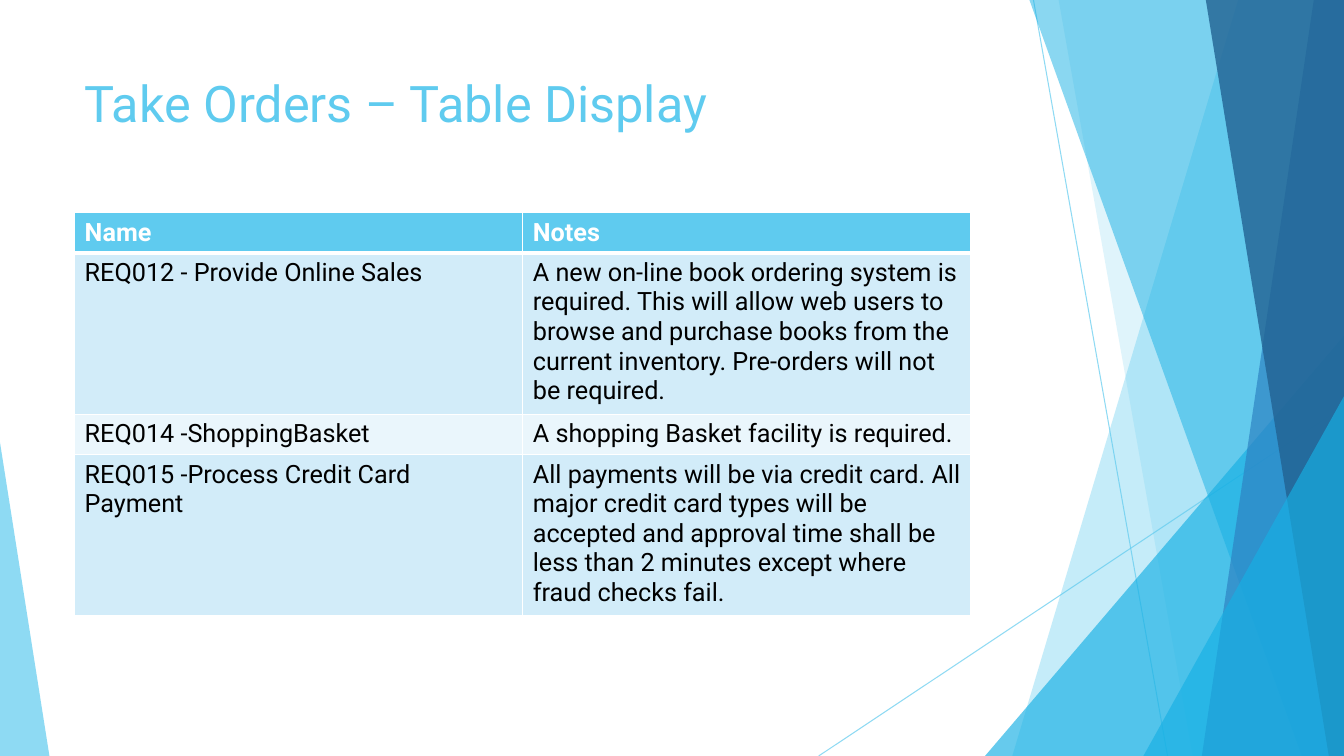
from lxml.etree import SubElement
from pptx import Presentation
from pptx.dml.color import RGBColor
from pptx.enum.shapes import MSO_CONNECTOR, MSO_SHAPE
from pptx.enum.text import MSO_ANCHOR
from pptx.oxml.ns import qn
from pptx.util import Inches, Pt

SKY = RGBColor(0x5F, 0xCB, 0xEF)
CYAN = RGBColor(0x17, 0xB0, 0xE4)
BLUE = RGBColor(0x2E, 0x83, 0xC3)
NAVY = RGBColor(0x22, 0x62, 0x92)
DARK_BAND = RGBColor(0xD2, 0xEC, 0xF9)
LIGHT_BAND = RGBColor(0xEA, 0xF6, 0xFC)
WHITE = RGBColor(0xFF, 0xFF, 0xFF)
BLACK = RGBColor(0, 0, 0)
FONT = "Roboto"
PAGE_WIDTH, PAGE_HEIGHT = 13.33, 7.5

REQUIREMENTS = [
    ("Name", "Notes"),
    ("REQ012 - Provide Online Sales",
     "A new on-line book ordering system is required. This will allow web users to "
     "browse and purchase books from the current inventory. Pre-orders will not be required."),
    ("REQ014 -ShoppingBasket", "A shopping Basket facility is required."),
    ("REQ015 -Process Credit Card Payment",
     "All payments will be via credit card. All major credit card types will be accepted "
     "and approval time shall be less than 2 minutes except where fraud checks fail."),
]
ROW_HEIGHTS = [0.39, 1.56, 0.39, 1.56]


def set_opacity(shape, percent):
    for color in shape.element.spPr.iter(qn("a:srgbClr")):
        SubElement(color, qn("a:alpha"), val=str(percent * 1000))


def paint(shape, color, opacity):
    shape.shadow.inherit = False
    shape.fill.solid()
    shape.fill.fore_color.rgb = color
    shape.line.fill.background()
    set_opacity(shape, opacity)


def add_hairline(page, start, end):
    line = page.shapes.add_connector(
        MSO_CONNECTOR.STRAIGHT, *(Inches(length) for length in start + end))
    line.line.color.rgb = SKY
    line.line.width = Pt(0.75)
    SubElement(line.element.spPr, qn("a:effectLst"))
    set_opacity(line, 70)


def add_facet(page, box, top_inset, bottom_inset, color, opacity):
    left, top, width, height = box
    right, bottom = left + width, top + height
    corners = [(right - top_inset, top), (right, top), (right, bottom),
               (right - bottom_inset, bottom)]
    points = [(Inches(x), Inches(y)) for x, y in corners]
    builder = page.shapes.build_freeform(*points[0], scale=1.0)
    builder.add_line_segments(points[1:], close=True)
    paint(builder.convert_to_shape(), color, opacity)


def add_corner(page, box, peak, color, opacity):
    triangle = page.shapes.add_shape(
        MSO_SHAPE.ISOSCELES_TRIANGLE, *(Inches(length) for length in box))
    triangle.adjustments[0] = peak
    paint(triangle, color, opacity)


def add_backdrop(page, box):
    left, top, width, height = box
    right, bottom = left + width, top + height

    def add_right_corner(corner_width, corner_height):
        corner = (right - corner_width, bottom - corner_height, corner_width, corner_height)
        add_corner(page, corner, 1, CYAN, 66)

    add_hairline(page, (right - 3.08, top), (right - 1.75, bottom))
    add_hairline(page, (right, bottom - 3.47), (right - 5.21, bottom))
    add_facet(page, box, 1.05, 3.29, SKY, 36)
    add_facet(page, box, 2.83, 1.5, SKY, 20)
    add_right_corner(3.56, 4.17)
    add_facet(page, box, 3.12, 0.42, CYAN, 50)
    add_facet(page, box, 0.3, 1.41, BLUE, 70)
    add_facet(page, box, 1.37, 0.15, NAVY, 80)
    add_right_corner(1.99, 3.57)
    add_corner(page, (left, bottom - 3.11, 0.49, 3.11), 0, SKY, 70)


def write_text(frame, text, color, **formats):
    para = frame.paragraphs[0]
    span = para.add_run()
    span.text = text
    span.font.color.rgb = color
    for name, value in {"name": FONT, **formats}.items():
        setattr(span.font, name, value)


def add_title(page, box, text):
    frame = page.shapes.add_textbox(*(Inches(length) for length in box)).text_frame
    frame.word_wrap = True
    frame.vertical_anchor = MSO_ANCHOR.TOP
    write_text(frame, text, SKY, size=Pt(36))


def add_cell_borders(cell, widths):
    properties = cell._tc.get_or_add_tcPr()
    for index, (side, width) in enumerate(widths.items()):
        border = properties.makeelement(qn(f"a:ln{side}"), {"w": str(Pt(width))})
        fill = SubElement(border, qn("a:solidFill"))
        SubElement(fill, qn("a:srgbClr"), val=str(WHITE))
        properties.insert(index, border)


def add_requirements(page, box):
    lengths = [Inches(length) for length in box]
    table = page.shapes.add_table(len(REQUIREMENTS), 2, *lengths).table
    for column in table.columns:
        column.width = lengths[2] // 2
    for index, (texts, height) in enumerate(zip(REQUIREMENTS, ROW_HEIGHTS)):
        header = index == 0
        table.rows[index].height = Inches(height)
        band = SKY if header else DARK_BAND if index % 2 else LIGHT_BAND
        borders = {"L": 1, "R": 1, "T": 3 if index == 1 else 1, "B": 3 if header else 1}
        for cell, text in zip(table.rows[index].cells, texts):
            cell.fill.solid()
            cell.fill.fore_color.rgb = band
            add_cell_borders(cell, borders)
            write_text(cell.text_frame, text, WHITE if header else BLACK,
                       size=Pt(18), bold=header)


def main():
    deck = Presentation()
    deck.slide_width, deck.slide_height = Inches(PAGE_WIDTH), Inches(PAGE_HEIGHT)
    page = deck.slides.add_slide(deck.slide_layouts[6])
    add_backdrop(page, (0, 0, PAGE_WIDTH, PAGE_HEIGHT))
    add_title(page, (0.74, 0.67, 9.4, 1.44), "Take Orders – Table Display")
    add_requirements(page, (0.74, 2.11, 8.89, sum(ROW_HEIGHTS)))
    deck.save("out.pptx")


if __name__ == "__main__":
    main()
